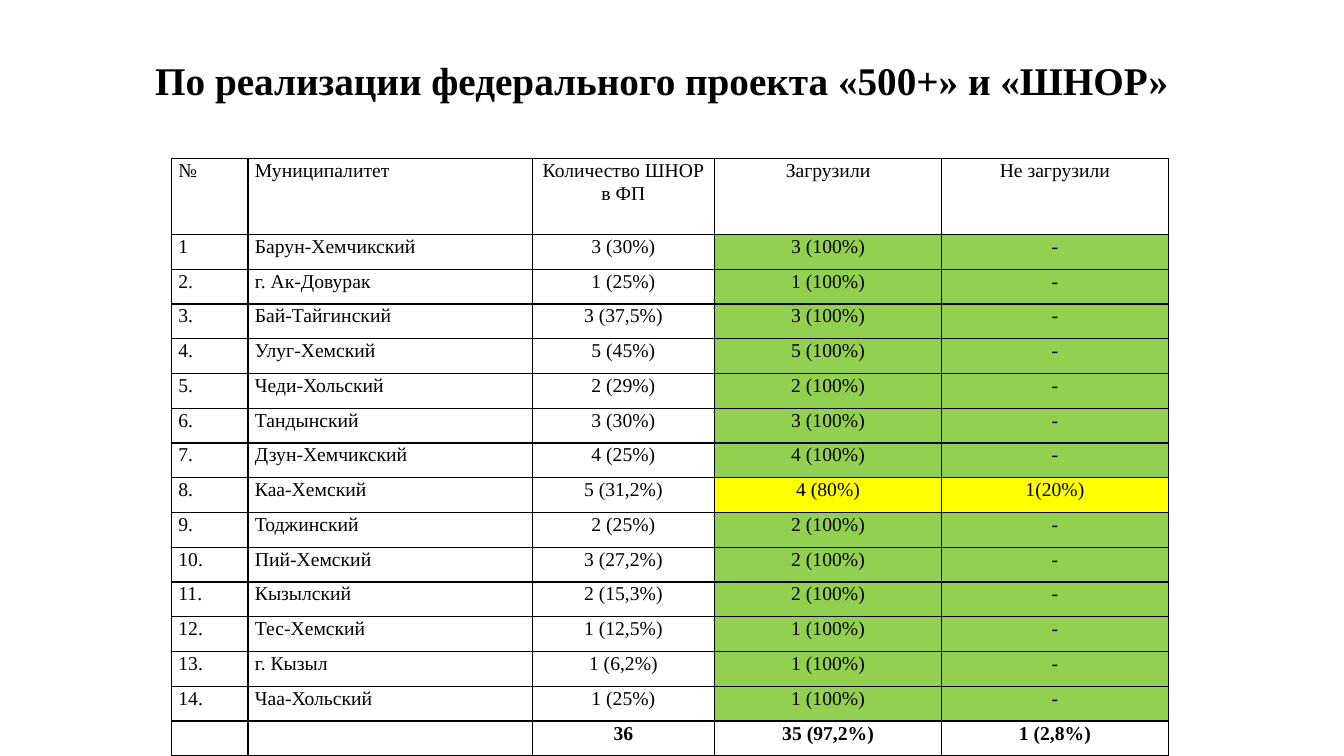
from lxml.etree import SubElement
from pptx import Presentation
from pptx.dml.color import RGBColor
from pptx.enum.text import MSO_ANCHOR, MSO_AUTO_SIZE, PP_ALIGN
from pptx.oxml.ns import qn
from pptx.util import Inches, Pt

FONT = "Times New Roman"
BLACK, GREEN, YELLOW = "000000", "92D050", "FFFF00"
HEADER = ("№", "Муниципалитет", "Количество ШНОР в ФП", "Загрузили", "Не загрузили")
MUNICIPALITIES = [
    ("1", "Барун-Хемчикский", "3 (30%)", "3 (100%)", "-"),
    ("2.", "г. Ак-Довурак", "1 (25%)", "1 (100%)", "-"),
    ("3.", "Бай-Тайгинский", "3 (37,5%)", "3 (100%)", "-"),
    ("4.", "Улуг-Хемский", "5 (45%)", "5 (100%)", "-"),
    ("5.", "Чеди-Хольский", "2 (29%)", "2 (100%)", "-"),
    ("6.", "Тандынский", "3 (30%)", "3 (100%)", "-"),
    ("7.", "Дзун-Хемчикский", "4 (25%)", "4 (100%)", "-"),
    ("8.", "Каа-Хемский", "5 (31,2%)", "4 (80%)", "1(20%)"),
    ("9.", "Тоджинский", "2 (25%)", "2 (100%)", "-"),
    ("10.", "Пий-Хемский", "3 (27,2%)", "2 (100%)", "-"),
    ("11.", "Кызылский", "2 (15,3%)", "2 (100%)", "-"),
    ("12.", "Тес-Хемский", "1 (12,5%)", "1 (100%)", "-"),
    ("13.", "г. Кызыл", "1 (6,2%)", "1 (100%)", "-"),
    ("14.", "Чаа-Хольский", "1 (25%)", "1 (100%)", "-"),
]
TOTAL = ("", "", "36", "35 (97,2%)", "1 (2,8%)")
ROWS = [HEADER, *MUNICIPALITIES, TOTAL]
COLUMN_PERCENTS = [5.7, 21.15, 13.58, 16.88, 16.88]
ROW_PERCENTS = [10] + [4.6] * (len(ROWS) - 1)

presentation = Presentation()
presentation.slide_width = Inches(13.33)
presentation.slide_height = Inches(7.5)
slide = presentation.slides.add_slide(presentation.slide_layouts[5])


def share(length, percent):
    return round(length * percent / 100)


def add_text(paragraph, text, size, bold, alignment, line_spacing):
    paragraph.alignment = alignment
    paragraph.line_spacing = line_spacing
    run = paragraph.add_run()
    run.text = text
    run.font.name = FONT
    run.font.size = Pt(size)
    run.font.bold = bold
    run.font.color.rgb = RGBColor.from_string(BLACK)


width, height = presentation.slide_width, presentation.slide_height

title = slide.shapes.title
title.left, title.top = share(width, 10.8), share(height, 5.33)
title.width, title.height = share(width, 82.37), share(height, 11.33)
title.text_frame.auto_size = MSO_AUTO_SIZE.NONE
title.text_frame.word_wrap = True
title.text_frame.vertical_anchor = MSO_ANCHOR.MIDDLE
add_text(title.text_frame.paragraphs[0], "По реализации федерального проекта «500+» и «ШНОР»",
         28, True, PP_ALIGN.LEFT, 0.9)

table = slide.shapes.add_table(
    len(ROWS), len(HEADER), share(width, 12.75), share(height, 21),
    share(width, sum(COLUMN_PERCENTS)), share(height, sum(ROW_PERCENTS))).table
table.first_row = False
table.horz_banding = False
for column, percent in zip(table.columns, COLUMN_PERCENTS):
    column.width = share(width, percent)
for row, percent in zip(table.rows, ROW_PERCENTS):
    row.height = share(height, percent)

for row_index, values in enumerate(ROWS):
    for column_index, text in enumerate(values):
        cell = table.cell(row_index, column_index)
        cell.margin_left = cell.margin_right = Inches(0.07)
        cell.margin_top = cell.margin_bottom = 0
        properties = cell._tc.get_or_add_tcPr()
        for side in ("a:lnL", "a:lnR", "a:lnT", "a:lnB"):
            border = SubElement(properties, qn(side), w=str(Pt(1)))
            SubElement(SubElement(border, qn("a:solidFill")), qn("a:srgbClr"), val=BLACK)
        if values in MUNICIPALITIES and column_index >= 3:
            cell.fill.solid()
            color = GREEN if values[4] == "-" else YELLOW
            cell.fill.fore_color.rgb = RGBColor.from_string(color)
        else:
            cell.fill.background()
        if text:
            alignment = PP_ALIGN.CENTER if column_index >= 2 else PP_ALIGN.LEFT
            add_text(cell.text_frame.paragraphs[0], text, 14, values == TOTAL, alignment, 1.07)

presentation.save("out.pptx")
